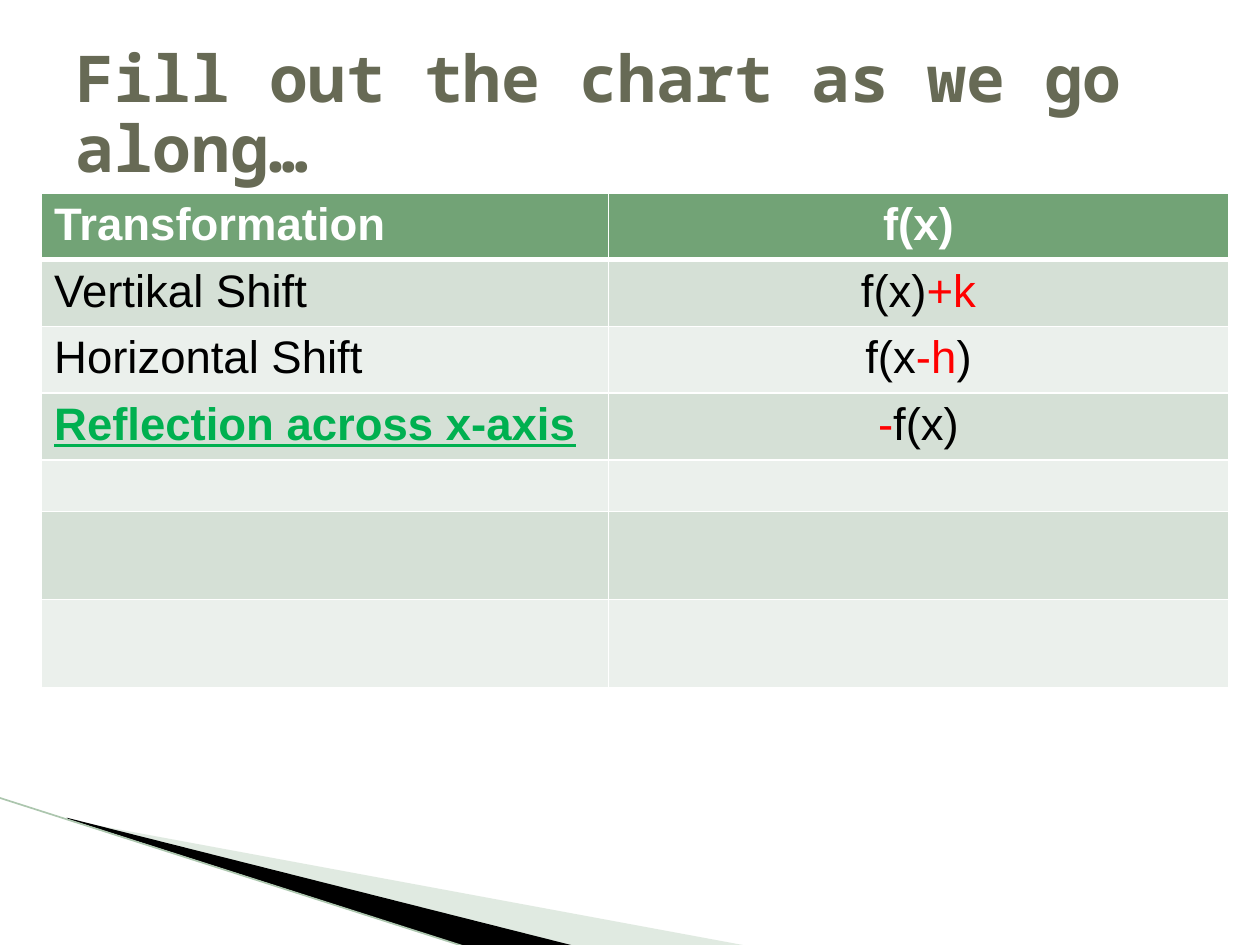
"""Build a slide with a table of function transformations."""
import pptx
import pptx.util
from lxml import etree
from pptx.dml.color import RGBColor
from pptx.enum.shapes import MSO_CONNECTOR
from pptx.enum.text import MSO_ANCHOR, PP_ALIGN
from pptx.oxml.ns import qn
from pptx.util import Inches

WHITE = RGBColor(0xFF, 0xFF, 0xFF)
BLACK = RGBColor(0, 0, 0)
RED = RGBColor(0xFF, 0, 0)
GREEN = RGBColor(0x00, 0xB0, 0x50)
OLIVE = RGBColor(0x67, 0x6A, 0x55)
HEADER_FILL = RGBColor(0x72, 0xA3, 0x76)
BAND_FILLS = [RGBColor(0xEB, 0xF0, 0xEC), RGBColor(0xD5, 0xE0, 0xD6)]
PALE_GREEN = RGBColor(0xB3, 0xCB, 0xB5)
LINE_GREEN = RGBColor(0xAC, 0xC6, 0xAE)

TITLE = "Fill out the chart as we go along…"
HEADER = {"color": WHITE, "bold": True}
PLAIN = {"color": BLACK}
ACCENT = {"color": RED}
KEY = {"color": GREEN, "bold": True, "underline": True}
ROWS = [
    (0.53, [("Transformation", HEADER)], [("f(x)", HEADER)]),
    (0.53, [("Vertikal Shift", PLAIN)], [("f(x)", PLAIN), ("+k", ACCENT)]),
    (0.53, [("Horizontal Shift", PLAIN)], [("f(x", PLAIN), ("-h", ACCENT), (")", PLAIN)]),
    (0.53, [("Reflection across x-axis", KEY)], [("-", ACCENT), ("f(x)", PLAIN)]),
    (0.41, [], []),
    (0.7, [], []),
    (0.7, [], []),
]
COLUMN_WIDTHS = [4.5, 4.92]
WEDGES = [
    ([(0.55, 6.51), (5.95, 7.51), (4.56, 7.51), (0.55, 6.5)], PALE_GREEN, 40),
    ([(0.53, 6.49), (4.57, 7.51), (3.72, 7.52), (0.54, 6.5)], BLACK, 100),
]


def add_run(paragraph, text, size, font_name, color, bold=False, underline=False):
    run = paragraph.add_run()
    run.text = text
    run.font.size = pptx.util.Pt(size)
    run.font.name = font_name
    run.font.color.rgb = color
    run.font.bold = bold
    run.font.underline = underline


def add_wedge(slide, points, color, opacity):
    corners = [(Inches(x), Inches(y)) for x, y in points]
    builder = slide.shapes.build_freeform(*corners[0])
    builder.add_line_segments(corners[1:])
    shape = builder.convert_to_shape()
    shape.shadow.inherit = False
    shape.fill.solid()
    shape.fill.fore_color.rgb = color
    shape.line.fill.background()
    if opacity < 100:
        color_element = shape.fill._xPr.find(".//" + qn("a:srgbClr"))
        etree.SubElement(color_element, qn("a:alpha"), val=str(opacity * 1000))


def add_edge_line(slide):
    connector = slide.shapes.add_connector(
        MSO_CONNECTOR.STRAIGHT, Inches(-0.01), Inches(6.33), Inches(3.71), Inches(7.52))
    connector.line.color.rgb = LINE_GREEN
    connector.line.width = pptx.util.Pt(0.95)
    etree.SubElement(connector._element.spPr, qn("a:effectLst"))


def set_borders(cell, widths):
    properties = cell._tc.get_or_add_tcPr()
    for side, width in widths.items():
        line = etree.SubElement(properties, qn("a:ln" + side), w=str(pptx.util.Pt(width)))
        fill = etree.SubElement(line, qn("a:solidFill"))
        etree.SubElement(fill, qn("a:srgbClr"), val=str(WHITE))


def add_transformation_table(slide):
    height = sum(row[0] for row in ROWS)
    table = slide.shapes.add_table(
        len(ROWS), len(COLUMN_WIDTHS), Inches(0.33), Inches(1.53),
        Inches(sum(COLUMN_WIDTHS)), Inches(height)).table
    for column, width in zip(table.columns, COLUMN_WIDTHS):
        column.width = Inches(width)
    for row_index, (row_height, *cells) in enumerate(ROWS):
        table.rows[row_index].height = Inches(row_height)
        for column_index, runs in enumerate(cells):
            cell = table.cell(row_index, column_index)
            set_borders(cell, {"L": 1, "R": 1, "T": 3 if row_index == 1 else 1,
                               "B": 3 if row_index == 0 else 1})
            cell.fill.solid()
            cell.fill.fore_color.rgb = BAND_FILLS[row_index % 2] if row_index else HEADER_FILL
            paragraph = cell.text_frame.paragraphs[0]
            paragraph.alignment = PP_ALIGN.CENTER if column_index else PP_ALIGN.LEFT
            for text, style in runs:
                add_run(paragraph, text, 26, "Arial", **style)


def add_title(slide):
    box = slide.shapes.add_textbox(Inches(0.5), Inches(0.3), Inches(9), Inches(1.25))
    frame = box.text_frame
    frame.word_wrap = True
    frame.vertical_anchor = MSO_ANCHOR.MIDDLE
    frame.paragraphs[0].line_spacing = 0.9
    add_run(frame.paragraphs[0], TITLE, 36.9, "Noto Sans Mono", OLIVE, bold=True)


def main():
    presentation = pptx.Presentation()
    presentation.slide_width = Inches(10)
    presentation.slide_height = Inches(7.5)
    slide = presentation.slides.add_slide(presentation.slide_layouts[6])
    for points, color, opacity in WEDGES:
        add_wedge(slide, points, color, opacity)
    add_edge_line(slide)
    add_transformation_table(slide)
    add_title(slide)
    presentation.save("out.pptx")


if __name__ == "__main__":
    main()
